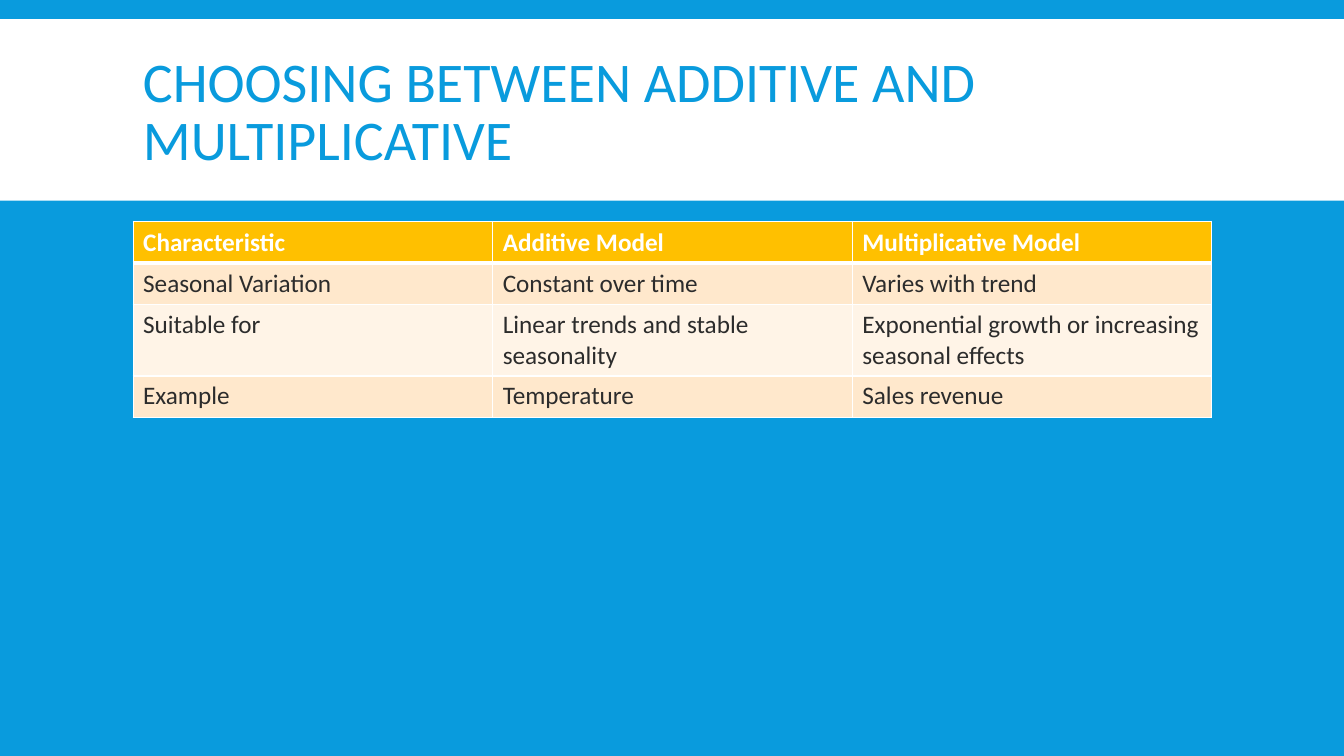
from dataclasses import dataclass

from lxml.etree import SubElement
from pptx import Presentation
from pptx.dml.color import RGBColor
from pptx.enum.shapes import MSO_SHAPE
from pptx.enum.text import MSO_ANCHOR
from pptx.oxml.ns import qn
from pptx.util import Inches, Pt

TITLE = "CHOOSING BETWEEN ADDITIVE AND MULTIPLICATIVE"
MODEL_ROWS = [
    ("Characteristic", "Additive Model", "Multiplicative Model"),
    ("Seasonal Variation", "Constant over time", "Varies with trend"),
    ("Suitable for", "Linear trends and stable seasonality",
     "Exponential growth or increasing seasonal effects"),
    ("Example", "Temperature", "Sales revenue"),
]
ROW_HEIGHTS = (0.41, 0.41, 0.71, 0.41)
SLIDE_WIDTH, SLIDE_HEIGHT = 13.33, 7.5
CONTENT_LEFT, CONTENT_WIDTH = 1.32, 10.7
TABLE_TOP = 2.2


@dataclass(frozen=True)
class Theme:
    font: str = "Calibri"
    title_size: int = 40
    table_size: int = 18
    blue: str = "099BDD"
    white: str = "FFFFFF"
    dark: str = "2C2C2C"
    header: str = "FFC000"
    bands: tuple = ("FFF4E7", "FFE8CC")
    thin_border: int = 1
    thick_border: int = 3


THEME = Theme()


def paint(fill, color):
    fill.solid()
    fill.fore_color.rgb = RGBColor.from_string(color)


def style_text(frame, size, color, bold=False):
    for para in frame.paragraphs:
        for span in para.runs:
            span.font.name = THEME.font
            span.font.size = Pt(size)
            span.font.bold = bold
            span.font.color.rgb = RGBColor.from_string(color)


def add_borders(cell, top, bottom):
    properties = cell._tc.get_or_add_tcPr()
    widths = {"L": THEME.thin_border, "R": THEME.thin_border, "T": top, "B": bottom}
    for side, width in widths.items():
        line = SubElement(properties, qn(f"a:ln{side}"), w=str(Pt(width)))
        fill = SubElement(line, qn("a:solidFill"))
        SubElement(fill, qn("a:srgbClr"), val=THEME.white)


def add_title(page):
    band = page.shapes.add_shape(
        MSO_SHAPE.RECTANGLE, 0, Inches(0.19), Inches(SLIDE_WIDTH), Inches(1.8))
    band.shadow.inherit = False
    paint(band.fill, THEME.white)
    band.line.fill.background()

    box = page.shapes.add_textbox(
        Inches(CONTENT_LEFT), Inches(0.31), Inches(CONTENT_WIDTH), Inches(1.65))
    frame = box.text_frame
    frame.word_wrap = True
    frame.vertical_anchor = MSO_ANCHOR.MIDDLE
    frame.text = TITLE
    frame.paragraphs[0].line_spacing = 0.85
    style_text(frame, THEME.title_size, THEME.blue)


def add_model_table(page):
    column_count = len(MODEL_ROWS[0])
    table = page.shapes.add_table(
        len(MODEL_ROWS), column_count, Inches(CONTENT_LEFT), Inches(TABLE_TOP),
        Inches(CONTENT_WIDTH), Inches(sum(ROW_HEIGHTS))).table
    for column in table.columns:
        column.width = Inches(CONTENT_WIDTH / column_count)
    for row_index, texts in enumerate(MODEL_ROWS):
        table.rows[row_index].height = Inches(ROW_HEIGHTS[row_index])
        is_header = row_index == 0
        top = THEME.thick_border if row_index == 1 else THEME.thin_border
        bottom = THEME.thick_border if is_header else THEME.thin_border
        for column_index, text in enumerate(texts):
            cell = table.cell(row_index, column_index)
            cell.text_frame.text = text
            cell.vertical_anchor = MSO_ANCHOR.MIDDLE if row_index < 2 else MSO_ANCHOR.TOP
            style_text(cell.text_frame, THEME.table_size,
                       THEME.white if is_header else THEME.dark, is_header)
            add_borders(cell, top, bottom)
            paint(cell.fill, THEME.header if is_header else THEME.bands[row_index % 2])


def main():
    deck = Presentation()
    deck.slide_width = Inches(SLIDE_WIDTH)
    deck.slide_height = Inches(SLIDE_HEIGHT)
    page = deck.slides.add_slide(deck.slide_layouts[6])
    paint(page.background.fill, THEME.blue)
    add_title(page)
    add_model_table(page)
    deck.save("out.pptx")


if __name__ == "__main__":
    main()
